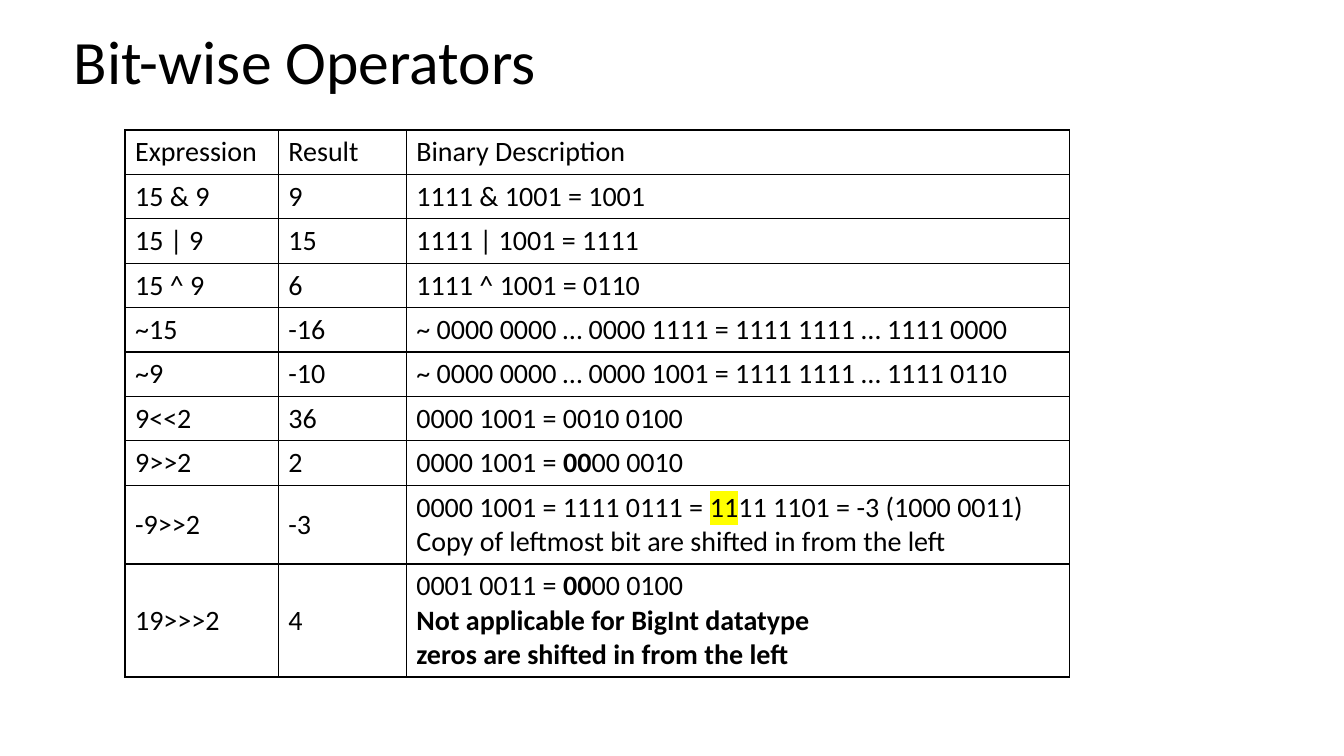
from lxml import etree
from pptx import Presentation
from pptx.dml.color import RGBColor
from pptx.enum.text import MSO_ANCHOR, PP_ALIGN
from pptx.oxml.ns import qn
from pptx.util import Pt

MID = MSO_ANCHOR.MIDDLE
LEFT = PP_ALIGN.LEFT
PX = 9144
FONT = "Calibri"
HEX = {"ink": "000000", "paper": "FFFFFF", "mark": "FFFF00"}
WIDTHS = (152, 127, 658)
PAD, LINE = 10, 34
BOLD = {"bold": True}
MARK = {"mark": "mark"}

HEAD = ("Expression", "Result", "Binary Description")
ROWS = [
    ("15 & 9", "9", "1111 & 1001 = 1001"),
    ("15 | 9", "15", "1111 | 1001 = 1111"),
    ("15 ^ 9", "6", "1111 ^ 1001 = 0110"),
    ("~15", "-16", "~ 0000 0000 … 0000 1111 = 1111 1111 … 1111 0000"),
    ("~9", "-10", "~ 0000 0000 … 0000 1001 = 1111 1111 … 1111 0110"),
    ("9<<2", "36", "0000 1001 = 0010 0100"),
    ("9>>2", "2", [[("0000 1001 = ", {}), ("00", BOLD), ("00 0010", {})]]),
    ("-9>>2", "-3", [
        [("0000 1001 = 1111 0111 = ", {}), ("11", MARK),
         ("11 1101 = -3 (1000 0011)", {})],
        [("Copy of leftmost bit are shifted in from the left", {})]]),
    ("19>>>2", "4", [
        [("0001 0011 = ", {}), ("00", BOLD), ("00 0100", {})],
        [("Not applicable for BigInt datatype", BOLD)],
        [("zeros are shifted in from the left", BOLD)]]),
]


def write(para, text, size=20, bold=False, color="ink", mark=None):
    """Add one formatted run to a paragraph."""
    run = para.add_run()
    run.text = text
    font = run.font
    font.size, font.bold, font.name = Pt(size), bold, FONT
    font.color.rgb = RGBColor.from_string(HEX[color])
    if mark:
        light = etree.Element(qn("a:highlight"))
        etree.SubElement(light, qn("a:srgbClr"), val=HEX[mark])
        run.font._element.find(qn("a:solidFill")).addnext(light)


def lines(item):
    """Return a cell's content as a list of lines of runs."""
    return [[(item, {})]] if isinstance(item, str) else item


def edge(cell):
    """Draw a thin line on all four sides of a cell."""
    props = cell._tc.get_or_add_tcPr()
    for side in "LRTB":
        line = etree.SubElement(props, qn(f"a:ln{side}"), w=str(Pt(1)))
        fill = etree.SubElement(line, qn("a:solidFill"))
        etree.SubElement(fill, qn("a:srgbClr"), val=HEX["ink"])


def fill_cell(cell, item):
    """Format a cell and write its lines."""
    edge(cell)
    cell.fill.solid()
    cell.fill.fore_color.rgb = RGBColor.from_string(HEX["paper"])
    cell.vertical_anchor = MID
    frame = cell.text_frame
    for i, runs in enumerate(lines(item)):
        para = frame.add_paragraph() if i else frame.paragraphs[0]
        for text, style in runs:
            write(para, text, **style)


def title(slide, text, x, y, w, h):
    """Place the slide title in its box."""
    shape = slide.shapes.title
    shape.left, shape.top, shape.width, shape.height = (
        v * PX for v in (x, y, w, h))
    shape.text_frame.vertical_anchor = MID
    para = shape.text_frame.paragraphs[0]
    para.alignment, para.line_spacing = LEFT, 0.9
    write(para, text, size=44)


def table(slide, rows, x, y):
    """Place the operator table with its top left corner at x, y."""
    tall = [PAD + LINE * max(len(lines(item)) for item in row) for row in rows]
    box = (x, y, sum(WIDTHS), sum(tall))
    grid = slide.shapes.add_table(
        len(rows), len(WIDTHS), *(v * PX for v in box)).table
    grid.first_row = grid.horz_banding = False
    for col, width in zip(grid.columns, WIDTHS):
        col.width = width * PX
    for r, row in enumerate(rows):
        grid.rows[r].height = tall[r] * PX
        for c, item in enumerate(row):
            fill_cell(grid.cell(r, c), item)


def main():
    """Build and save the slide."""
    deck = Presentation()
    deck.slide_width, deck.slide_height = 1333 * PX, 750 * PX
    slide = deck.slides.add_slide(deck.slide_layouts[5])
    title(slide, "Bit-wise Operators", 63, 20, 1150, 88)
    table(slide, [HEAD] + ROWS, 124, 129)
    deck.save("out.pptx")


if __name__ == "__main__":
    main()
